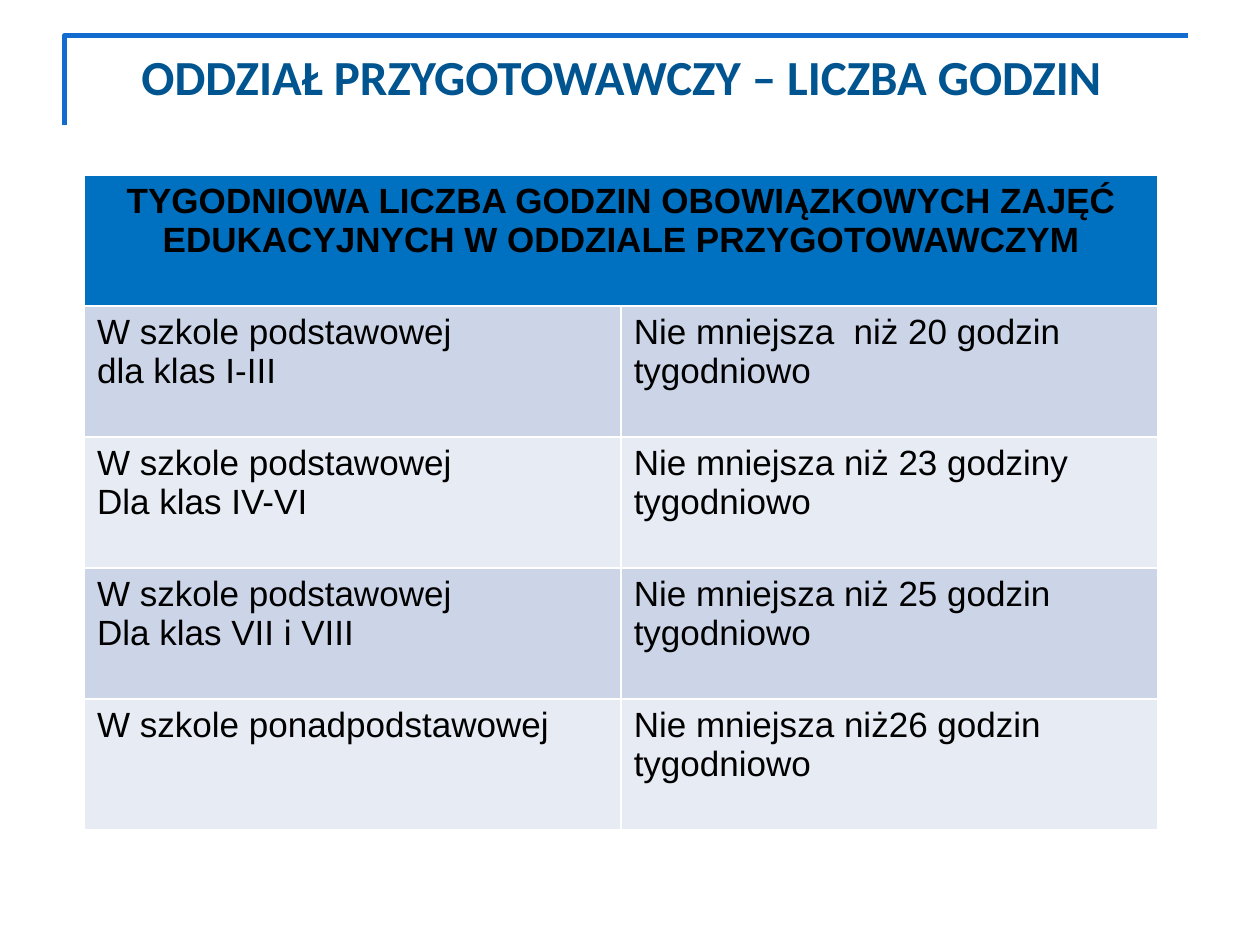
from lxml import etree
from pptx import Presentation
from pptx.dml.color import RGBColor as RGB
from pptx.enum.text import MSO_ANCHOR as ANCHOR, PP_ALIGN as ALIGN
from pptx.oxml.ns import qn
from pptx.util import Inches, Pt

TITLE = "ODDZIAŁ PRZYGOTOWAWCZY – LICZBA GODZIN"
HEADING = "TYGODNIOWA LICZBA GODZIN OBOWIĄZKOWYCH ZAJĘĆ EDUKACYJNYCH W ODDZIALE PRZYGOTOWAWCZYM"
HOURS = [
    ("W szkole podstawowej\ndla klas I-III", "Nie mniejsza  niż 20 godzin tygodniowo"),
    ("W szkole podstawowej\nDla klas IV-VI", "Nie mniejsza niż 23 godziny tygodniowo"),
    ("W szkole podstawowej\nDla klas VII i VIII", "Nie mniejsza niż 25 godzin tygodniowo"),
    ("W szkole ponadpodstawowej", "Nie mniejsza niż26 godzin tygodniowo"),
]
COLORS = {
    "frame": "126CD0", "title": "005490", "heading": "0070C0", "text": "000000",
    "odd": "CCD5E8", "even": "E7EBF4", "border": "FFFFFF",
}
TITLE_FONT = {"name": "Calibri", "size": Pt(28), "bold": True}
HEADING_FONT = {"name": "Arial", "size": Pt(20), "bold": True}
BODY_FONT = HEADING_FONT | {"bold": False}
LEFT, WIDTH, ROW_HEIGHT = 0.67, 8.52, 1.04
FRAME_POINTS = [(0.51, 0.99), (0.51, 0.28), (9.43, 0.28)]


def write(frame, text, font, color, align):
    frame.text = text
    for paragraph in frame.paragraphs:
        paragraph.alignment = align
        for run in paragraph.runs:
            for key, value in font.items():
                setattr(run.font, key, value)
            run.font.color.rgb = RGB.from_string(COLORS[color])


def add_borders(cell):
    properties = cell._tc.get_or_add_tcPr()
    for side in ("lnL", "lnR", "lnT", "lnB"):
        line = etree.SubElement(properties, qn(f"a:{side}"), w=str(Pt(1)))
        fill = etree.SubElement(line, qn("a:solidFill"))
        etree.SubElement(fill, qn("a:srgbClr"), val=COLORS["border"])


def paint(cell, color):
    add_borders(cell)
    cell.fill.solid()
    cell.fill.fore_color.rgb = RGB.from_string(COLORS[color])


def add_frame(slide):
    start, *corners = [(Inches(x), Inches(y)) for x, y in FRAME_POINTS]
    builder = slide.shapes.build_freeform(*start)
    builder.add_line_segments(corners, close=False)
    frame = builder.convert_to_shape()
    frame.shadow.inherit = False
    frame.fill.background()
    frame.line.color.rgb = RGB.from_string(COLORS["frame"])
    frame.line.width = Pt(2.75)


def add_title(slide):
    box = slide.shapes.add_textbox(Inches(LEFT), Inches(0.29), Inches(WIDTH), Inches(0.63))
    title = box.text_frame
    title.word_wrap = True
    title.vertical_anchor = ANCHOR.MIDDLE
    write(title, TITLE, TITLE_FONT, "title", ALIGN.CENTER)


def add_hours(slide):
    row_count = len(HOURS) + 1
    hours = slide.shapes.add_table(
        row_count, 2, Inches(LEFT), Inches(1.39), Inches(WIDTH), Inches(ROW_HEIGHT * row_count)
    ).table
    heading = hours.cell(0, 0)
    heading.merge(hours.cell(0, 1))
    write(heading.text_frame, HEADING, HEADING_FONT, "text", ALIGN.CENTER)
    for column in range(2):
        paint(hours.cell(0, column), "heading")
    for row, entry in enumerate(HOURS, 1):
        for column, text in enumerate(entry):
            cell = hours.cell(row, column)
            write(cell.text_frame, text, BODY_FONT, "text", ALIGN.LEFT)
            paint(cell, "odd" if row % 2 else "even")


def main():
    deck = Presentation()
    deck.slide_width, deck.slide_height = Inches(10), Inches(7.5)
    slide = deck.slides.add_slide(deck.slide_layouts[6])
    add_frame(slide)
    add_title(slide)
    add_hours(slide)
    deck.save("out.pptx")


if __name__ == "__main__":
    main()
